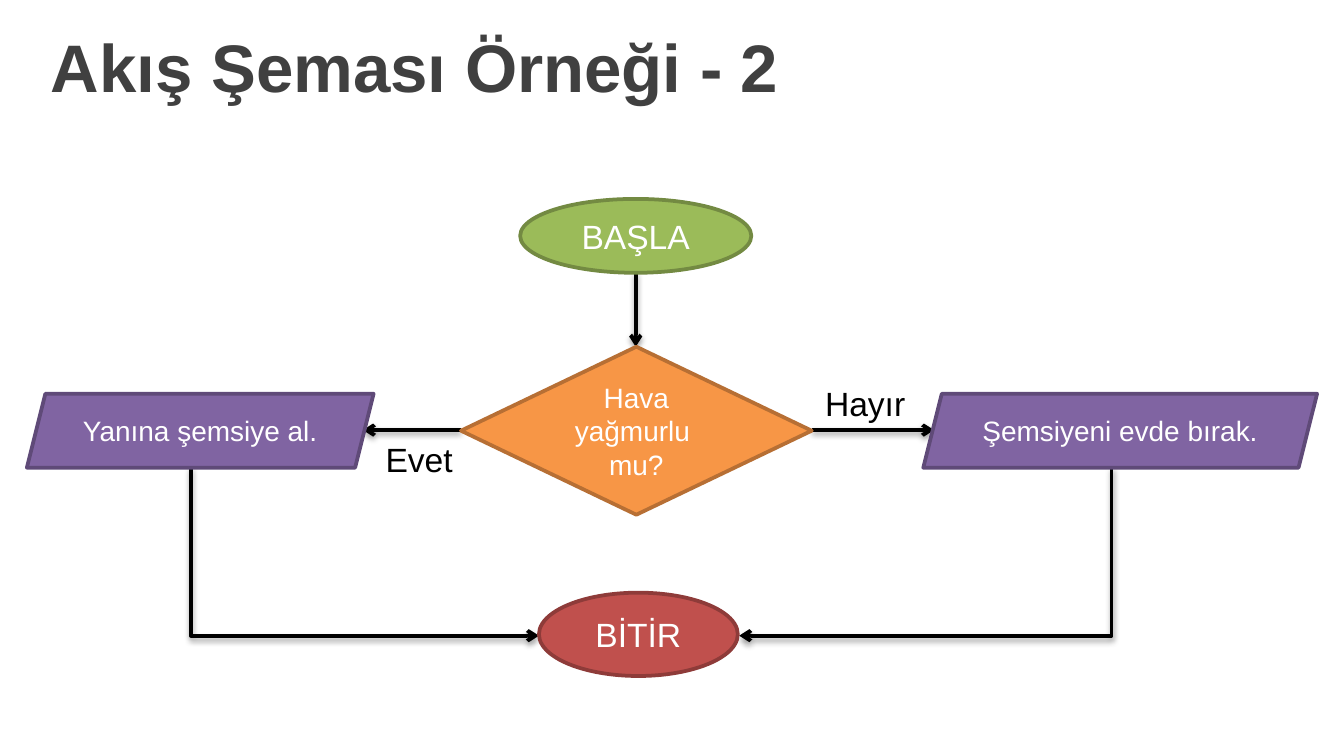
from lxml import etree
from pptx import Presentation
from pptx.dml.color import RGBColor
from pptx.enum.shapes import MSO_CONNECTOR as Connector, MSO_SHAPE as Shape
from pptx.enum.text import MSO_ANCHOR as Anchor, PP_ALIGN as Align
from pptx.oxml import parse_xml
from pptx.oxml.ns import nsdecls, qn
from pptx.util import Inches, Pt


def color(value):
    return RGBColor.from_string(value)


def write(shape, text, size, text_color, bold=False, align=Align.LEFT):
    shape.text_frame.text = text
    for paragraph in shape.text_frame.paragraphs:
        paragraph.alignment = align
        paragraph.font.name = "Arial"
        paragraph.font.size = Pt(size)
        paragraph.font.bold = bold
        paragraph.font.color.rgb = color(text_color)


# Widescreen slide, 16:9
presentation = Presentation()
presentation.slide_width = Inches(10)
presentation.slide_height = Inches(10 * 9 / 16)
slide = presentation.slides.add_slide(presentation.slide_layouts[6])

# Title
title = slide.shapes.add_textbox(Inches(0.28), Inches(0), Inches(9.72), Inches(0.97))
title.text_frame.word_wrap = True
title.text_frame.vertical_anchor = Anchor.MIDDLE
write(title, "Akış Şeması Örneği - 2", 36, "404040", bold=True)

# Arrows: start and end points; a bent arrow goes down first, then sideways
arrows = [
    ((3.43, 3.2), (2.7, 3.2)),
    ((6.04, 3.2), (6.95, 3.2)),
    ((4.73, 2.03), (4.73, 2.58)),
    ((8.27, 3.48), (5.5, 4.73)),
    ((1.42, 3.48), (4.01, 4.73)),
]
for (x1, y1), (x2, y2) in arrows:
    if x1 == x2 or y1 == y2:
        arrow = slide.shapes.add_connector(
            Connector.STRAIGHT, Inches(x1), Inches(y1), Inches(x2), Inches(y2))
    else:
        # The elbow is turned a quarter, so its width is the drop
        drop, span = y2 - y1, abs(x2 - x1)
        left, top = (x1 + x2 - drop) / 2, (y1 + y2 - span) / 2
        arrow = slide.shapes.add_connector(
            Connector.ELBOW, Inches(left), Inches(top),
            Inches(left + drop), Inches(top + span))
        properties = arrow._element.spPr
        properties.find(qn("a:prstGeom")).set("prst", "bentConnector2")
        frame = properties.find(qn("a:xfrm"))
        frame.set("rot", str((90 if x2 < x1 else 270) * 60000))
        if x2 > x1:
            frame.set("flipH", "1")
    arrow.line.color.rgb = color("000000")
    arrow.line.width = Pt(2)
    etree.SubElement(arrow.line._get_or_add_ln(), qn("a:tailEnd"), type="arrow")
    arrow._element.spPr.append(parse_xml(
        f'<a:effectLst {nsdecls("a")}>'
        '<a:outerShdw blurRad="40000" dist="20000" dir="5400000" rotWithShape="0">'
        '<a:srgbClr val="000000"><a:alpha val="38000"/></a:srgbClr>'
        '</a:outerShdw></a:effectLst>'))

# Flowchart steps: shape, left, top, width, height, fill, line, size, text
steps = [
    (Shape.OVAL, 3.87, 1.48, 1.72, 0.55, "9BBB59", "738A42", 18, "BAŞLA"),
    (Shape.DIAMOND, 3.43, 2.58, 2.61, 1.25, "F79646", "B76F34", 15,
     "Hava\vyağmurlu \nmu?"),
    (Shape.PARALLELOGRAM, 0.2, 2.93, 2.58, 0.55, "8064A2", "5F4A78", 15,
     "Yanına şemsiye al."),
    (Shape.PARALLELOGRAM, 6.87, 2.93, 2.93, 0.55, "8064A2", "5F4A78", 15,
     "Şemsiyeni evde bırak."),
    (Shape.OVAL, 4.01, 4.41, 1.48, 0.62, "C0504D", "8E3B39", 18, "BİTİR"),
]
for kind, left, top, width, height, fill, line, size, text in steps:
    step = slide.shapes.add_shape(
        kind, Inches(left), Inches(top), Inches(width), Inches(height))
    step.shadow.inherit = False
    step.fill.solid()
    step.fill.fore_color.rgb = color(fill)
    step.line.color.rgb = color(line)
    step.line.width = Pt(2)
    step.text_frame.vertical_anchor = Anchor.MIDDLE
    write(step, text, size, "FFFFFF", align=Align.CENTER)

# Branch labels
for text, left, top, width in [("Hayır", 6.04, 2.8, 0.81), ("Evet", 2.77, 3.22, 0.71)]:
    label = slide.shapes.add_textbox(
        Inches(left), Inches(top), Inches(width), Inches(0.4))
    label.text_frame.word_wrap = False
    write(label, text, 18, "000000")

presentation.save("out.pptx")
